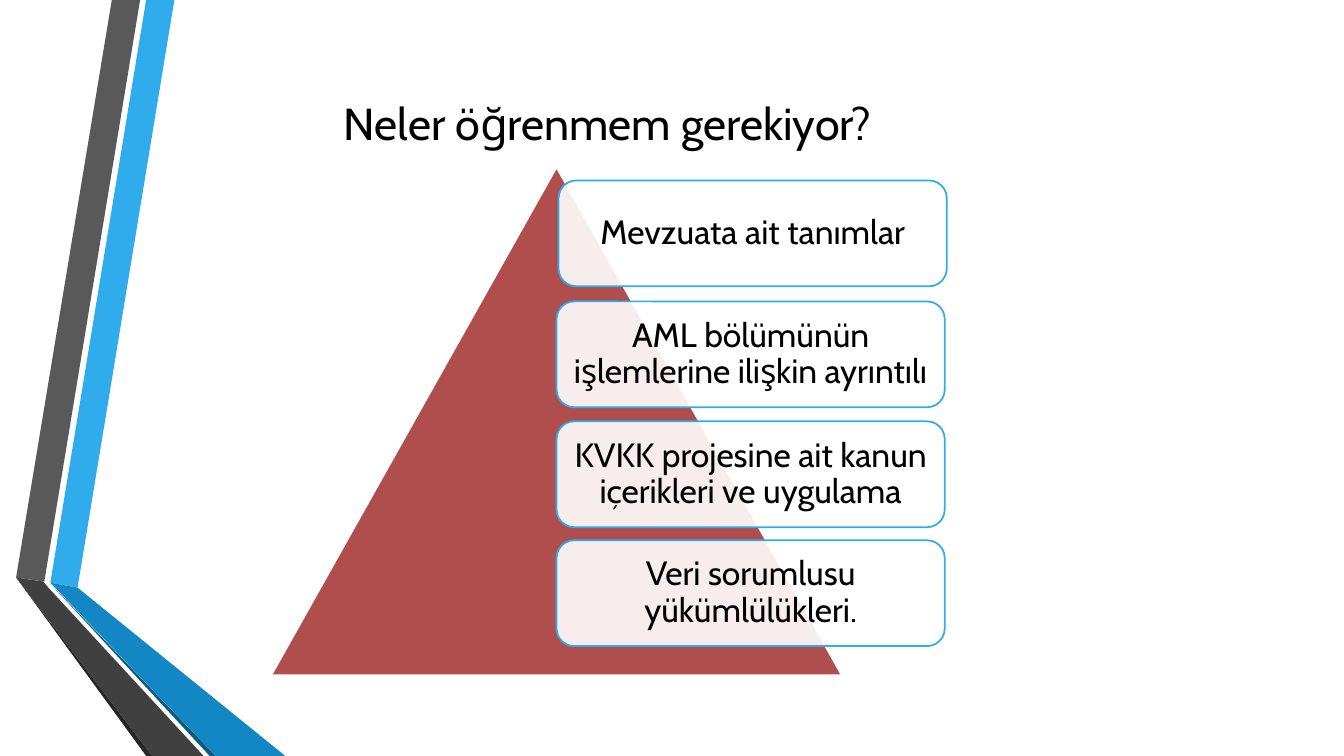
"""Build the slide listing what has to be learned, as a pyramid with four cards."""
import pptx
import pptx.util
import pptx.dml.color
import pptx.enum.shapes
import pptx.enum.text
import pptx.oxml
import pptx.oxml.ns

Inches = pptx.util.Inches
Pt = pptx.util.Pt
RGBColor = pptx.dml.color.RGBColor
SHAPES = pptx.enum.shapes.MSO_SHAPE

WHITE = RGBColor(0xFF, 0xFF, 0xFF)
BLACK = RGBColor(0x00, 0x00, 0x00)
BLUE = RGBColor(0x30, 0xAC, 0xEC)
MID_BLUE = RGBColor(0x12, 0x87, 0xC3)
DARK_BLUE = RGBColor(0x0C, 0x5A, 0x82)
GREY = RGBColor(0x59, 0x59, 0x59)
MID_GREY = RGBColor(0x40, 0x40, 0x40)
DARK_GREY = RGBColor(0x26, 0x26, 0x26)
RED = RGBColor(0xB0, 0x4E, 0x4E)


def write_text(box, text, size, margin, line_spacing=1.0):
    frame = box.text_frame
    frame.word_wrap = True
    frame.auto_size = pptx.enum.text.MSO_AUTO_SIZE.NONE
    frame.vertical_anchor = pptx.enum.text.MSO_ANCHOR.MIDDLE
    frame.margin_left = frame.margin_right = Inches(margin)
    frame.margin_top = frame.margin_bottom = Inches(margin)
    para = frame.paragraphs[0]
    para.alignment = pptx.enum.text.PP_ALIGN.CENTER
    para.line_spacing = line_spacing
    span = para.add_run()
    span.text = text
    span.font.name = "Cabin"
    span.font.size = Pt(size)
    span.font.color.rgb = BLACK


def paint(shape, fill, line=None):
    shape.shadow.inherit = False
    shape.fill.solid()
    shape.fill.fore_color.rgb = fill
    if line is None:
        shape.line.fill.background()
    else:
        shape.line.color.rgb = line
        shape.line.width = Pt(1.25)


deck = pptx.Presentation()
deck.slide_width = Inches(13.33)
deck.slide_height = Inches(7.5)
page = deck.slides.add_slide(deck.slide_layouts[5])
page.background.fill.solid()
page.background.fill.fore_color.rgb = WHITE

ribbons = [
    (BLUE, [(0.5, 5.78), (0.77, 5.83), (1.73, 0), (1.45, 0)]),
    (GREY, [(1.39, 0), (1.11, 0), (0.16, 5.73), (0.44, 5.77)]),
    (DARK_GREY, [(0.16, 5.73), (1.45, 7.5), (1.51, 7.5)]),
    (DARK_BLUE, [(0.5, 5.79), (2.08, 7.5), (2.14, 7.5)]),
    (MID_BLUE, [(0.5, 5.78), (2.14, 7.5), (2.83, 7.5), (0.77, 5.83)]),
    (MID_GREY, [(2.02, 7.5), (0.48, 5.83), (0.43, 5.77), (0.16, 5.73), (1.51, 7.5)]),
]
for color, corners in ribbons:
    points = [(Inches(x), Inches(y)) for x, y in corners]
    builder = page.shapes.build_freeform(*points[0])
    builder.add_line_segments(points[1:], close=True)
    paint(builder.convert_to_shape(), color)

title = page.shapes.title
title.left, title.top = Inches(0.53), Inches(0.47)
title.width, title.height = Inches(11), Inches(1.5)
write_text(title, "Neler öğrenmem gerekiyor?", size=32, margin=0.1)

pyramid = page.shapes.add_shape(
    SHAPES.ISOSCELES_TRIANGLE, Inches(2.69), Inches(1.66), Inches(5.66), Inches(5.04))
paint(pyramid, RED, line=WHITE)

cards = [
    (5.54, 1.79, "Mevzuata ait tanımlar"),
    (5.52, 2.99, "AML bölümünün işlemlerine ilişkin ayrıntılı"),
    (5.52, 4.18, "KVKK projesine ait kanun içerikleri ve uygulama"),
    (5.52, 5.36, "Veri sorumlusu yükümlülükleri."),
]
for left, top, text in cards:
    card = page.shapes.add_shape(
        SHAPES.ROUNDED_RECTANGLE, Inches(left), Inches(top), Inches(3.85), Inches(1.05))
    paint(card, WHITE, line=BLUE)
    fill_color = card.fill._xPr.find(".//" + pptx.oxml.ns.qn("a:srgbClr"))
    fill_color.append(pptx.oxml.parse_xml(
        '<a:alpha xmlns:a="http://schemas.openxmlformats.org/drawingml/2006/main" val="90000"/>'))
    write_text(card, text, size=24, margin=0.1, line_spacing=0.9)

deck.save("out.pptx")
